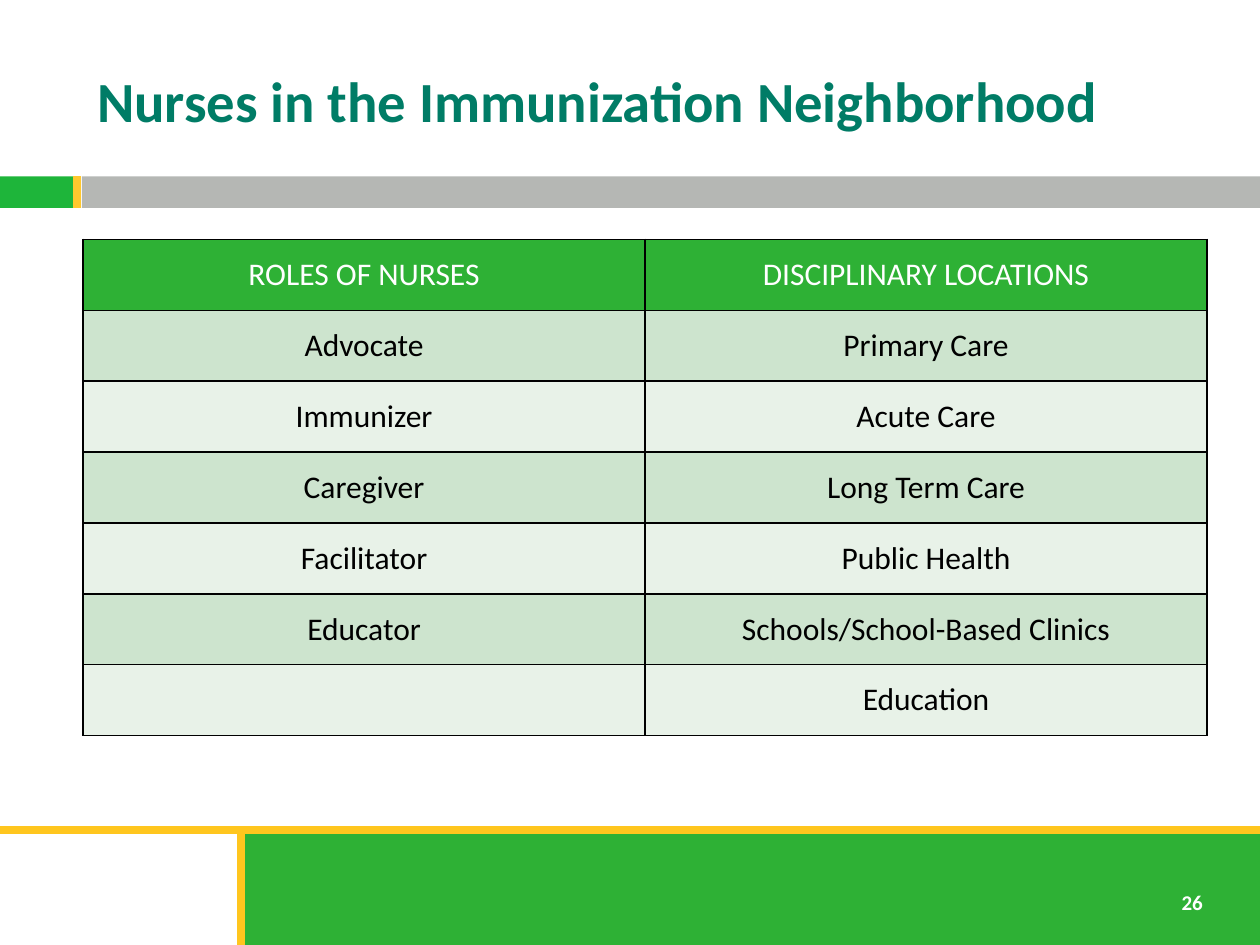
from lxml.etree import SubElement
from pptx import Presentation
from pptx.dml.color import RGBColor
from pptx.enum.shapes import MSO_CONNECTOR, MSO_SHAPE
from pptx.enum.text import MSO_ANCHOR, MSO_AUTO_SIZE, PP_ALIGN
from pptx.oxml.ns import qn
from pptx.util import Inches, Pt

THEME = {
    "font": "Calibri",
    "title_size": 32.4, "table_size": 18, "number_size": 12,
    "white": "FFFFFF", "black": "000000", "teal": "007C66",
    "bright_green": "1EB53A", "green": "2EB135", "grey": "B5B7B4",
    "footer_gold": "FFC61E", "band_gold": "FFC82E",
    "stripes": ("E8F2E8", "CDE4CE"),
}
WIDTH, HEIGHT = 10, 7.5
BAND_TOP, BAND_BOTTOM = 1.4, 1.65
FOOTER_TOP, FOOTER_LEFT = 6.59, 1.91


def color(name):
    """Look a colour up in the theme, or take it as a hex value."""
    return RGBColor.from_string(THEME.get(name, name))


def add_text(paragraph, text, size, color_name, bold=False):
    run = paragraph.add_run()
    run.text = text
    run.font.name = THEME["font"]
    run.font.size = Pt(THEME[size])
    run.font.bold = bold
    run.font.color.rgb = color(color_name)


presentation = Presentation()
presentation.slide_width, presentation.slide_height = Inches(WIDTH), Inches(HEIGHT)
slide = presentation.slides.add_slide(presentation.slide_layouts[5])

# Band under the title and footer block: left, top, right, bottom
blocks = [
    (0, 1.35, WIDTH, 1.7, "white"),
    (0, BAND_TOP, 0.58, BAND_BOTTOM, "bright_green"),
    (0.65, BAND_TOP, WIDTH, BAND_BOTTOM, "grey"),
    (FOOTER_LEFT, FOOTER_TOP, WIDTH, HEIGHT, "green"),
]
for left, top, right, bottom, fill in blocks:
    block = slide.shapes.add_shape(
        MSO_SHAPE.RECTANGLE, Inches(left), Inches(top),
        Inches(right - left), Inches(bottom - top))
    block.shadow.inherit = False
    block.fill.solid()
    block.fill.fore_color.rgb = color(fill)
    block.line.fill.background()

# Gold rules
rules = [
    (0, FOOTER_TOP, WIDTH, FOOTER_TOP, "footer_gold"),
    (FOOTER_LEFT, FOOTER_TOP, FOOTER_LEFT, HEIGHT, "footer_gold"),
    (0.61, BAND_TOP, 0.61, BAND_BOTTOM, "band_gold"),
]
for *ends, gold in rules:
    rule = slide.shapes.add_connector(MSO_CONNECTOR.STRAIGHT, *map(Inches, ends))
    rule.line.color.rgb = color(gold)
    rule.line.width = Pt(4.5)
    SubElement(rule._element.spPr, qn("a:effectLst"))

# Slide number
number_box = slide.shapes.add_textbox(Inches(9.28), Inches(7.01), Inches(0.4), Inches(0.3))
number_box.text_frame.word_wrap = False
number_box.text_frame.auto_size = MSO_AUTO_SIZE.SHAPE_TO_FIT_TEXT
add_text(number_box.text_frame.paragraphs[0], "26", "number_size", "white", bold=True)

# Title
title = slide.shapes.title
title.left, title.top, title.width, title.height = map(Inches, (0.67, 0.25, 8.92, 1.08))
title.text_frame.auto_size = MSO_AUTO_SIZE.NONE
title.text_frame.vertical_anchor = MSO_ANCHOR.MIDDLE
title_paragraph = title.text_frame.paragraphs[0]
title_paragraph.alignment = PP_ALIGN.LEFT
add_text(title_paragraph, "Nurses in the Immunization Neighborhood",
         "title_size", "teal", bold=True)

# Table of roles and locations
rows = [
    ("ROLES OF NURSES", "DISCIPLINARY LOCATIONS"),
    ("Advocate", "Primary Care"),
    ("Immunizer", "Acute Care"),
    ("Caregiver", "Long Term Care"),
    ("Facilitator", "Public Health"),
    ("Educator", "Schools/School-Based Clinics"),
    ("", "Education"),
]
table = slide.shapes.add_table(
    len(rows), 2, Inches(0.66), Inches(1.9), Inches(8.92), Inches(3.94)).table
for row_index, texts in enumerate(rows):
    is_header = row_index == 0
    fill = "green" if is_header else THEME["stripes"][row_index % 2]
    for column_index, text in enumerate(texts):
        cell = table.cell(row_index, column_index)
        cell.vertical_anchor = MSO_ANCHOR.MIDDLE
        properties = cell._tc.get_or_add_tcPr()
        for side in ("a:lnL", "a:lnR", "a:lnT", "a:lnB"):
            border = SubElement(properties, qn(side), w=str(Pt(1)))
            border_fill = SubElement(border, qn("a:solidFill"))
            SubElement(border_fill, qn("a:srgbClr"), val=THEME["black"])
        cell.fill.solid()
        cell.fill.fore_color.rgb = color(fill)
        paragraph = cell.text_frame.paragraphs[0]
        paragraph.alignment = PP_ALIGN.CENTER
        if text:
            add_text(paragraph, text, "table_size", "white" if is_header else "black")

presentation.save("out.pptx")
